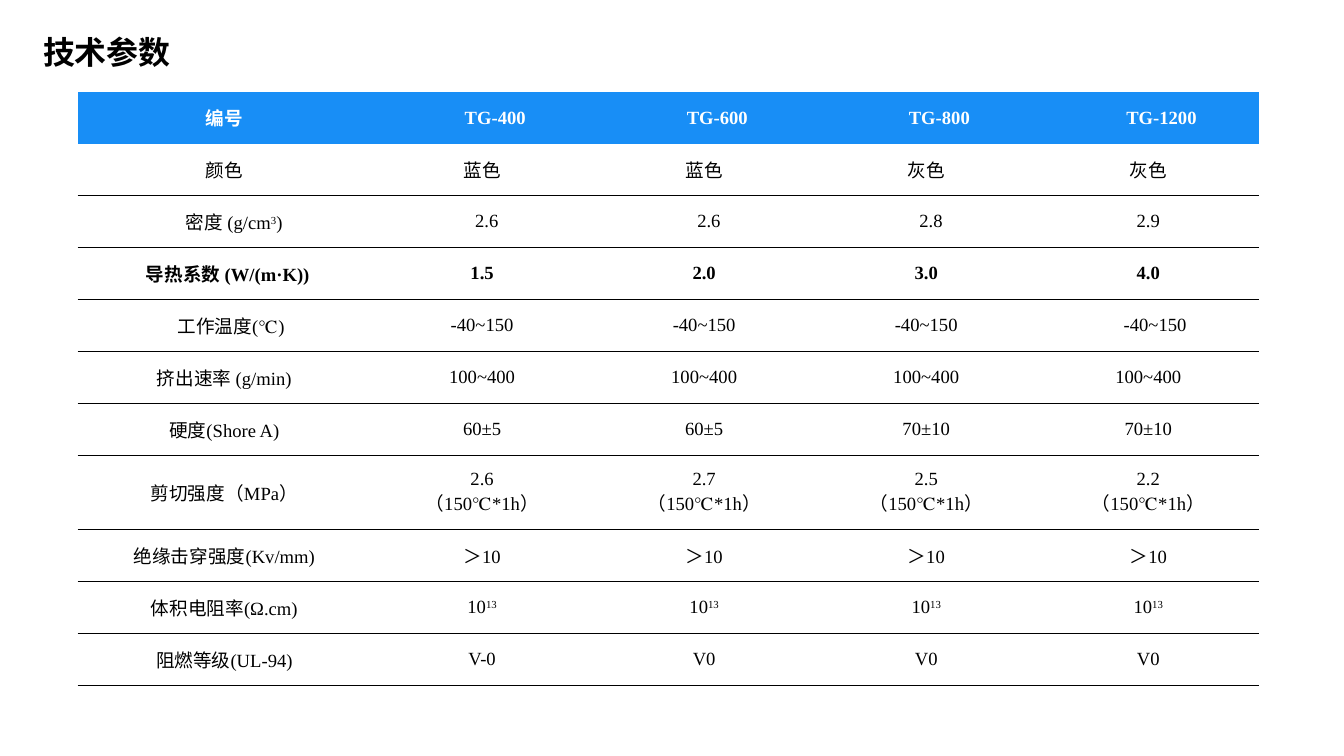
"""Build the technical parameter slide of a thermal gel range."""
from dataclasses import dataclass

from lxml import etree
from pptx import Presentation
from pptx.dml.color import RGBColor
from pptx.enum.text import MSO_ANCHOR, MSO_AUTO_SIZE, PP_ALIGN
from pptx.oxml.ns import qn
from pptx.util import Cm, Pt

LEFT, CENTER = PP_ALIGN.LEFT, PP_ALIGN.CENTER
MIDDLE = MSO_ANCHOR.MIDDLE
FIXED_SIZE = MSO_AUTO_SIZE.NONE
NO_GRID_STYLE = "{2D5ABB26-0587-4C30-8999-92F81FD0307C}"

HEADING = "技术参数"
PARAMETERS = [
    ("编号", "TG-400", "TG-600", "TG-800", "TG-1200"),
    ("颜色", "蓝色", "蓝色", "灰⾊", "灰色"),
    ("密度 (g/cm^3^)", "2.6", "2.6", "2.8", "2.9"),
    ("导热系数 (W/(m·K))", "1.5", "2.0", "3.0", "4.0"),
    ("工作温度(℃)", *["-40~150"] * 4),
    ("挤出速率 (g/min)", *["100~400"] * 4),
    ("硬度(Shore A)", "60±5", "60±5", "70±10", "70±10"),
    ("剪切强度（MPa）", *[f"{strength}\n（150℃*1h）" for strength in ("2.6", "2.7", "2.5", "2.2")]),
    ("绝缘击穿强度(Kv/mm)", *["＞10"] * 4),
    ("体积电阻率(Ω.cm)", *["10^13^"] * 4),
    ("阻燃等级(UL-94)", "V-0", "V0", "V0", "V0"),
]
HEADER_ROW, DENSITY_ROW, CONDUCTIVITY_ROW, TEMPERATURE_ROW, SHEAR_ROW = 0, 2, 3, 4, 7
BOLD_ROWS = (HEADER_ROW, CONDUCTIVITY_ROW)
INDENTS = {
    HEADER_ROW: (0, 0.7, 0.7, 0.7, 0.7),
    DENSITY_ROW: (0.53, 0.25, 0.25, 0.25, 0),
    CONDUCTIVITY_ROW: (0.18, 0, 0, 0, 0),
    TEMPERATURE_ROW: (0.36, 0, 0, 0, 0.36),
}
NO_INDENTS = (0, 0, 0, 0, 0)

SLIDE_SIZE = Cm(35.71), Cm(20.09)
HEADING_BOX = Cm(0.89), Cm(0.74), Cm(3.96), Cm(1.27)
TABLE_LEFT, TABLE_TOP = Cm(2.06), Cm(2.44)
COLUMN_WIDTHS = [Cm(7.8)] + [Cm(5.9)] * 4
ROW_HEIGHTS = [Cm(1.98 if row == SHEAR_ROW else 1.38) for row in range(len(PARAMETERS))]


@dataclass(frozen=True)
class Theme:
    """Colours, fonts and type sizes of the slide."""
    ink: RGBColor = RGBColor(0, 0, 0)
    header_fill: RGBColor = RGBColor(0x18, 0x8E, 0xF6)
    header_ink: RGBColor = RGBColor(255, 255, 255)
    chinese: str = "Noto Sans CJK SC"
    latin: str = "Times New Roman"
    heading_size: Pt = Pt(24)
    table_size: Pt = Pt(14)
    rule: Pt = Pt(1)


THEME = Theme()


def style_paragraph(paragraph, face, size, color, bold, alignment):
    """Set the alignment and the fonts of one paragraph."""
    paragraph.alignment = alignment
    font = paragraph.font
    font.name, font.size, font.bold = face, size, bold
    font.color.rgb = color
    defaults = paragraph._p.pPr.find(qn("a:defRPr"))
    etree.SubElement(defaults, qn("a:ea")).set("typeface", THEME.chinese)


def add_runs(paragraph, marked_text):
    """Write text in which carets enclose superscripts."""
    for position, part in enumerate(marked_text.split("^")):
        if part:
            run = paragraph.add_run()
            run.text = part
            if position % 2:
                run._r.get_or_add_rPr().set("baseline", "30000")


def add_bottom_rule(cell):
    """Draw the line under one cell."""
    rule = etree.Element(qn("a:lnB"), w=str(THEME.rule))
    fill = etree.SubElement(rule, qn("a:solidFill"))
    etree.SubElement(fill, qn("a:srgbClr")).set("val", str(THEME.ink))
    cell._tc.get_or_add_tcPr().insert(0, rule)


def fill_cell(cell, text, row, indent):
    """Write and format one cell of the parameter table."""
    is_header = row == HEADER_ROW
    cell.vertical_anchor = MIDDLE
    if is_header:
        cell.fill.solid()
        cell.fill.fore_color.rgb = THEME.header_fill
    else:
        cell.fill.background()
        add_bottom_rule(cell)
    for number, line in enumerate(text.split("\n")):
        frame = cell.text_frame
        paragraph = frame.add_paragraph() if number else frame.paragraphs[0]
        add_runs(paragraph, line)
        if indent:
            paragraph._p.get_or_add_pPr().set("marL", str(Cm(indent)))
        ink = THEME.header_ink if is_header else THEME.ink
        style_paragraph(paragraph, THEME.latin, THEME.table_size, ink, row in BOLD_ROWS, CENTER)


def add_heading(slide):
    """Place the slide heading in the title placeholder."""
    heading = slide.shapes.title
    heading.left, heading.top, heading.width, heading.height = HEADING_BOX
    frame = heading.text_frame
    frame.text = HEADING
    frame.word_wrap = False
    frame.auto_size = FIXED_SIZE
    frame.vertical_anchor = MIDDLE
    style_paragraph(frame.paragraphs[0], THEME.chinese, THEME.heading_size, THEME.ink, True, LEFT)


def add_parameters(slide):
    """Build the parameter table."""
    table = slide.shapes.add_table(
        len(PARAMETERS), len(COLUMN_WIDTHS), TABLE_LEFT, TABLE_TOP,
        sum(COLUMN_WIDTHS), sum(ROW_HEIGHTS)).table
    table.horz_banding = False
    table._tbl.tblPr.find(qn("a:tableStyleId")).text = NO_GRID_STYLE
    for column, width in zip(table.columns, COLUMN_WIDTHS):
        column.width = width
    for row, (values, height) in enumerate(zip(PARAMETERS, ROW_HEIGHTS)):
        table.rows[row].height = height
        indents = INDENTS.get(row, NO_INDENTS)
        for column, (value, indent) in enumerate(zip(values, indents)):
            fill_cell(table.cell(row, column), value, row, indent)


def main():
    """Create and save the presentation."""
    presentation = Presentation()
    presentation.slide_width, presentation.slide_height = SLIDE_SIZE
    slide = presentation.slides.add_slide(presentation.slide_layouts[5])
    add_heading(slide)
    add_parameters(slide)
    presentation.save("out.pptx")


if __name__ == "__main__":
    main()
